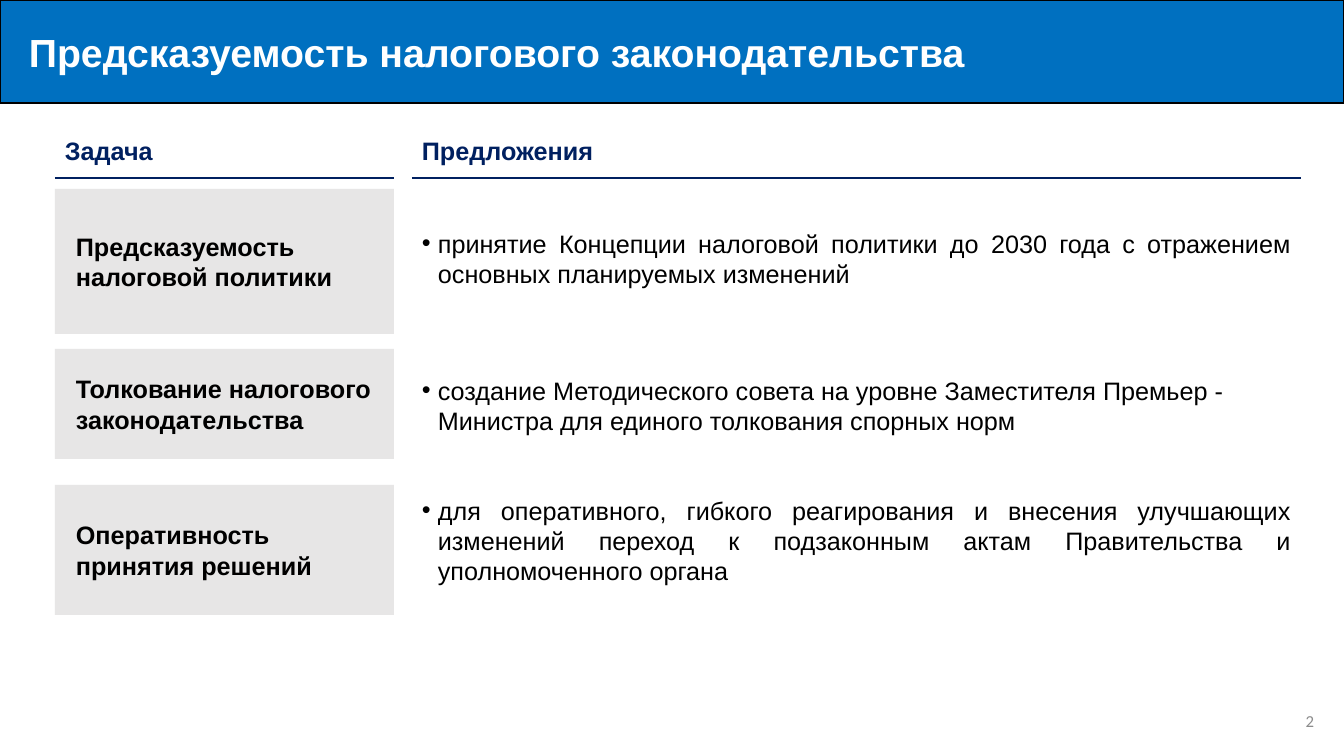
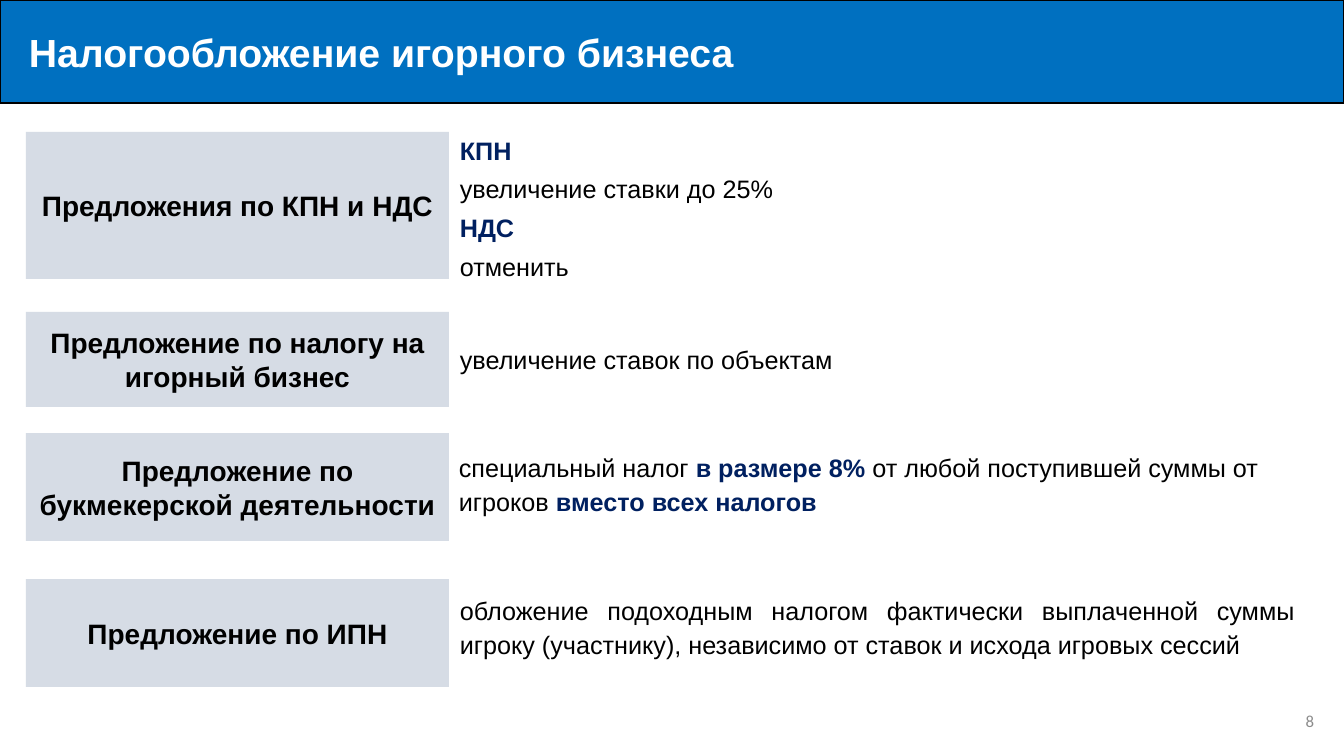
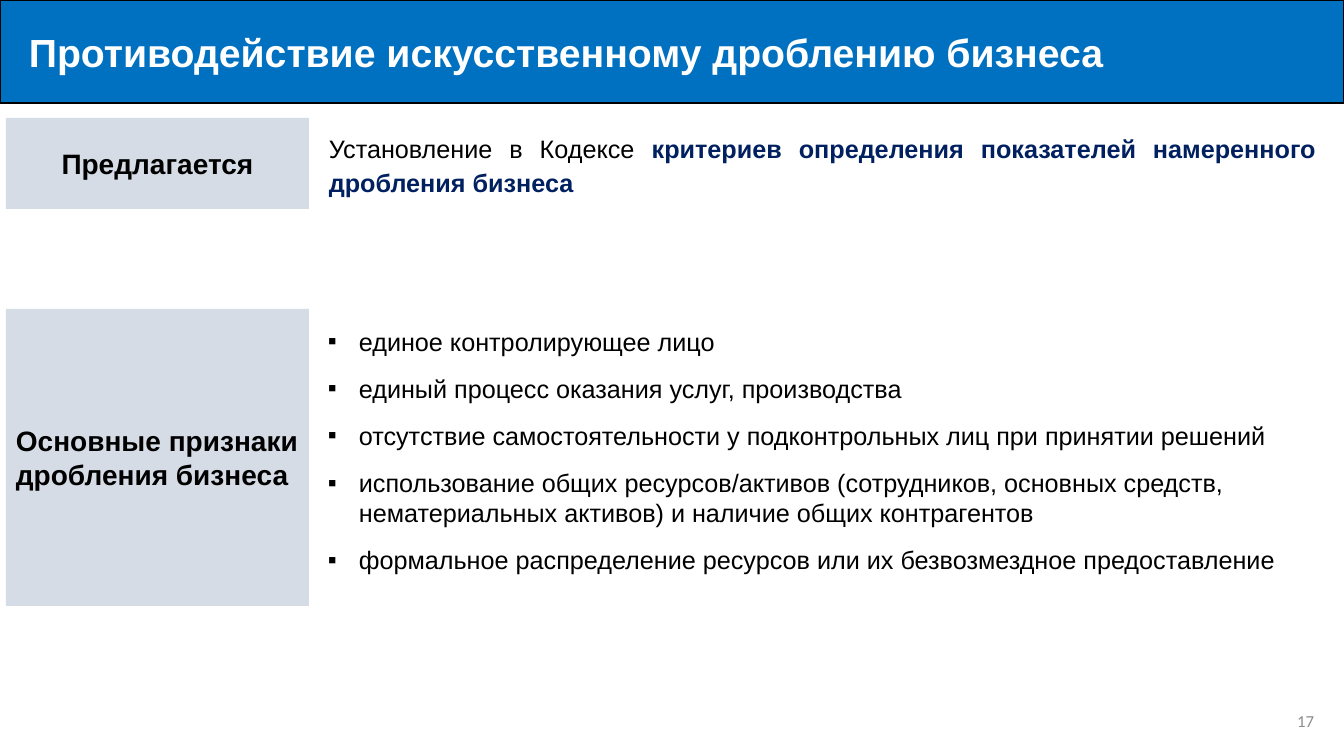
import pptx
import pptx.util
import pptx.dml.color
import pptx.enum.shapes
import pptx.enum.text
import pptx.oxml.ns
import lxml.etree

PX = 914400 / 100.8
SLIDE_W, SLIDE_H = 1344, 756
COLORS = {"band": "0070C0", "white": "FFFFFF", "black": "000000", "navy": "002060",
          "gray": "E7E6E6", "steel": "D6DCE5", "number": "8C8C8C"}
ALIGN = pptx.enum.text.PP_ALIGN
ANCHOR = pptx.enum.text.MSO_ANCHOR

# Run styles: color, bold
PLAIN, ACCENT = ("black", False), ("navy", True)
STRONG, TITLE, NUMBER = ("black", True), ("white", True), ("number", False)

# Paragraph styles
BULLETED = {"left": 16, "hanging": 16, "bullet": "•"}
JUSTIFIED_BULLET = {**BULLETED, "align": ALIGN.JUSTIFY}
SPACED = {"left": 1, "line": 1.14, "before": 3, "align": ALIGN.JUSTIFY}
LOOSE = {"line": 1.13}
SIGNS = {"left": 31, "hanging": 31, "bullet": "▪", "before": 6, "after": 6}
CENTERED = {"size": 20, "align": ALIGN.CENTER}
LEFT = {"size": 20, "after": 6}
TASK = {"left": 11}

# Content: each row holds card (top, height, label, style)
# and proposal (top, width, height, paragraphs of runs, style)
SLIDES = [
    {
        "title": "Предсказуемость налогового законодательства", "number": "2",
        "card": (55, 339, "gray"), "proposal_x": 412,
        "headings": [("Задача", 55, 394), ("Предложения", 412, 1301)],
        "rows": [
            ((189, 145, "Предсказуемость налоговой политики", TASK),
             (223, 889, 72, [[("принятие Концепции налоговой политики до 2030 года с отражением "
                               "основных планируемых изменений", PLAIN)]], JUSTIFIED_BULLET)),
            ((349, 110, "Толкование налогового законодательства", TASK),
             (370, 889, 72, [[("создание Методического совета на уровне Заместителя Премьер - "
                               "Министра для единого толкования спорных норм", PLAIN)]], BULLETED)),
            ((485, 130, "Оперативность принятия решений", TASK),
             (490, 889, 102, [[("для оперативного, гибкого реагирования и внесения улучшающих "
                                "изменений переход к подзаконным актам Правительства и "
                                "уполномоченного органа", PLAIN)]], JUSTIFIED_BULLET)),
        ],
    },
    {
        "title": "Налогообложение игорного бизнеса", "number": "8",
        "card": (26, 423, "steel"), "proposal_x": 449, "headings": [],
        "rows": [
            ((132, 147, "Предложения по КПН и НДС", CENTERED),
             (126, 576, 162, [[("КПН", ACCENT)], [("увеличение ставки до 25%", PLAIN)],
                              [("НДС", ACCENT)], [("отменить", PLAIN)]], SPACED)),
            ((312, 95, "Предложение по налогу на игорный бизнес", CENTERED),
             (335, 822, 42, [[("увеличение ставок по объектам", PLAIN)]], SPACED)),
            ((433, 108, "Предложение по букмекерской деятельности", CENTERED),
             (443, 845, 80, [[("специальный налог ", PLAIN), ("в размере 8% ", ACCENT),
                              ("от любой поступившей суммы от игроков ", PLAIN),
                              ("вместо всех налогов", ACCENT)]], LOOSE)),
            ((579, 108, "Предложение по ИПН", CENTERED),
             (586, 856, 80, [[("обложение подоходным налогом фактически выплаченной суммы "
                               "игроку (участнику), независимо от ставок и исхода игровых сессий",
                               PLAIN)]], SPACED)),
        ],
    },
    {
        "title": "Противодействие искусственному дроблению бизнеса", "number": "17",
        "card": (6, 303, "steel"), "proposal_x": 318, "headings": [],
        "rows": [
            ((118, 91, "Предлагается", CENTERED),
             (124, 1008, 80, [[("Установление в Кодексе ", PLAIN),
                               ("критериев определения показателей намеренного дробления бизнеса",
                                ACCENT)]], SPACED)),
            ((309, 297, "Основные признаки дробления бизнеса", LEFT),
             (321, 1008, 261, [
                 [("единое контролирующее лицо", PLAIN)],
                 [("единый процесс оказания услуг, производства", PLAIN)],
                 [("отсутствие самостоятельности у подконтрольных лиц при принятии решений", PLAIN)],
                 [("использование общих ресурсов/активов (сотрудников, основных средств, "
                   "нематериальных активов) и наличие общих контрагентов", PLAIN)],
                 [("формальное распределение ресурсов или их безвозмездное предоставление", PLAIN)],
             ], SIGNS)),
        ],
    },
]


def px(*lengths):
    return [pptx.util.Emu(round(length * PX)) for length in lengths]


def rgb(name):
    return pptx.dml.color.RGBColor.from_string(COLORS[name])


def write(frame, paragraphs, size=18, font="Arial", align=ALIGN.LEFT, anchor=ANCHOR.TOP,
          left=0, hanging=0, bullet=None, line=None, before=0, after=0):
    frame.word_wrap = True
    frame.vertical_anchor = anchor
    for index, runs in enumerate(paragraphs):
        paragraph = frame.paragraphs[0] if index == 0 else frame.add_paragraph()
        paragraph.alignment = align
        paragraph.space_before = pptx.util.Pt(before if index else 0)
        paragraph.space_after = pptx.util.Pt(after)
        if line:
            paragraph.line_spacing = line
        properties = paragraph._p.get_or_add_pPr()
        margin, indent = px(left, -hanging)
        properties.set("marL", str(margin))
        properties.set("indent", str(indent))
        if bullet:
            tag = pptx.oxml.ns.qn
            color = lxml.etree.SubElement(properties, tag("a:buClr"))
            lxml.etree.SubElement(color, tag("a:srgbClr"), val=COLORS["black"])
            lxml.etree.SubElement(properties, tag("a:buFont"), typeface="Arial")
            lxml.etree.SubElement(properties, tag("a:buChar"), char=bullet)
        for text, (color_name, bold) in runs:
            run = paragraph.add_run()
            run.text = text
            run.font.name = font
            run.font.size = pptx.util.Pt(size)
            run.font.bold = bold
            run.font.color.rgb = rgb(color_name)


def add_block(slide, box, fill, paragraphs, outline=None, **style):
    block = slide.shapes.add_shape(pptx.enum.shapes.MSO_SHAPE.RECTANGLE, *px(*box))
    block.shadow.inherit = False
    block.fill.solid()
    block.fill.fore_color.rgb = rgb(fill)
    if outline:
        block.line.color.rgb = rgb(outline)
        block.line.width = pptx.util.Pt(1)
    else:
        block.line.fill.background()
    write(block.text_frame, paragraphs, anchor=ANCHOR.MIDDLE, **style)


def add_text(slide, box, paragraphs, **style):
    write(slide.shapes.add_textbox(*px(*box)).text_frame, paragraphs, **style)


def add_rule(slide, start, end, y):
    rule = slide.shapes.add_connector(pptx.enum.shapes.MSO_CONNECTOR.STRAIGHT,
                                      *px(start, y, end, y))
    rule.line.color.rgb = rgb("navy")
    rule.line.width = pptx.util.Pt(1)
    lxml.etree.SubElement(rule._element.spPr, pptx.oxml.ns.qn("a:effectLst"))


def build_slide(deck, content):
    slide = deck.slides.add_slide(deck.slide_layouts[6])
    # Title band and page number
    add_block(slide, (0, 0, SLIDE_W, 103), "band", [[(content["title"], TITLE)]],
              outline="black", size=28, left=19)
    add_text(slide, (1022, 701, 302, 40), [[(content["number"], NUMBER)]],
             size=12, font="Calibri", align=ALIGN.RIGHT, anchor=ANCHOR.MIDDLE)
    # Column headings
    for heading, start, end in content["headings"]:
        add_text(slide, (start, 130, 274, 40), [[(heading, ACCENT)]])
        add_rule(slide, start, end, 178)
    # Cards with their proposals
    card_x, card_w, card_fill = content["card"]
    for card, proposal in content["rows"]:
        top, height, label, style = card
        add_block(slide, (card_x, top, card_w, height), card_fill, [[(label, STRONG)]], **style)
        top, width, height, paragraphs, style = proposal
        add_text(slide, (content["proposal_x"], top, width, height), paragraphs, **style)


def main():
    deck = pptx.Presentation()
    deck.slide_width, deck.slide_height = px(SLIDE_W, SLIDE_H)
    for content in SLIDES:
        build_slide(deck, content)
    deck.save("out.pptx")


if __name__ == "__main__":
    main()
